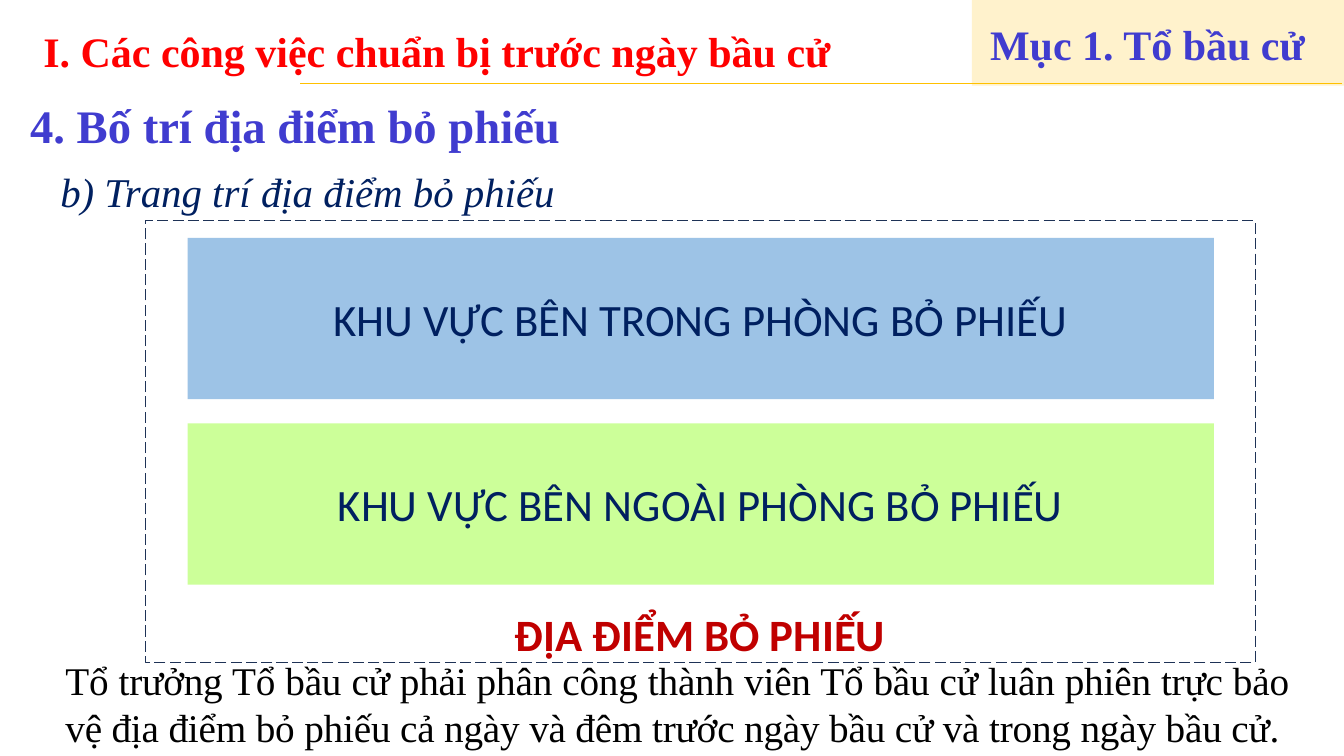
"""Build the slide on arranging and decorating the polling place."""
import pptx
import pptx.dml.color
import pptx.enum.dml
import pptx.enum.shapes
import pptx.enum.text
import pptx.util

PX = 9144
COLORS = {
    "red": "FF0000", "violet": "403CCF", "navy": "002060", "crimson": "C00000",
    "black": "000000", "cream": "FFF2CC", "gold": "FFC000", "frame": "1E3256",
    "blue": "9DC3E6", "green": "CCFF99",
}
SERIF, SANS = "Times New Roman", "Calibri"
ALIGN = pptx.enum.text.PP_ALIGN
ANCHOR = pptx.enum.text.MSO_ANCHOR
RECTANGLE = pptx.enum.shapes.MSO_SHAPE.RECTANGLE


def color(name):
    return pptx.dml.color.RGBColor.from_string(COLORS[name])


def write(box, text, size, font, ink, align=ALIGN.LEFT, anchor=ANCHOR.TOP,
          bold=False, italic=False):
    frame = box.text_frame
    frame.text = text
    frame.word_wrap = True
    frame.vertical_anchor = anchor
    para = frame.paragraphs[0]
    para.alignment = align
    span = para.runs[0]
    span.font.size = pptx.util.Pt(size)
    span.font.name = font
    span.font.bold = bold
    span.font.italic = italic
    span.font.color.rgb = color(ink)
    return para


deck = pptx.Presentation()
deck.slide_width = 1333 * PX
deck.slide_height = 750 * PX
page = deck.slides.add_slide(deck.slide_layouts[5])

title = page.shapes.title
title.left, title.top, title.width, title.height = [n * PX for n in (33, 0, 1280, 100)]
write(title, "I. Các công việc chuẩn bị trước ngày bầu cử", 30, SERIF, "red",
      anchor=ANCHOR.MIDDLE, bold=True)
title.text_frame.auto_size = pptx.enum.text.MSO_AUTO_SIZE.NONE

section_band = page.shapes.add_shape(RECTANGLE, *[n * PX for n in (964, 0, 369, 85)])
section_band.shadow.inherit = False
section_band.fill.solid()
section_band.fill.fore_color.rgb = color("cream")
section_band.line.fill.background()

header_rule = page.shapes.add_connector(
    pptx.enum.shapes.MSO_CONNECTOR.STRAIGHT, *[n * PX for n in (1331, 83, 298, 83)])
header_rule.line.color.rgb = color("gold")
header_rule.line.width = pptx.util.Pt(0.5)
header_rule._element.spPr.append(pptx.oxml.parse_xml(
    '<a:effectLst xmlns:a="http://schemas.openxmlformats.org/drawingml/2006/main"/>'))

section_label = page.shapes.add_textbox(*[n * PX for n in (982, 24, 351, 41)])
para = write(section_label, "Mục 1. Tổ bầu cử", 30, SERIF, "violet", bold=True)
para.line_spacing = pptx.util.Pt(32.1)
label_frame = section_label.text_frame
label_frame.word_wrap = False
label_frame.margin_left = label_frame.margin_right = 0
label_frame.margin_top = label_frame.margin_bottom = 0

heading = page.shapes.add_textbox(*[n * PX for n in (20, 89, 1303, 65)])
para = write(heading, "4. Bố trí địa điểm bỏ phiếu", 33.3, SERIF, "violet", bold=True)
para.line_spacing = pptx.util.Pt(41.7)

subheading = page.shapes.add_textbox(*[n * PX for n in (50, 160, 1234, 59)])
write(subheading, "b) Trang trí địa điểm bỏ phiếu", 29.2, SERIF, "navy",
      align=ALIGN.JUSTIFY, italic=True)

areas = [
    ("KHU VỰC BÊN TRONG PHÒNG BỎ PHIẾU", "blue"),
    ("KHU VỰC BÊN NGOÀI PHÒNG BỎ PHIẾU", "green"),
]
for row, (name, fill) in enumerate(areas):
    area = page.shapes.add_shape(
        RECTANGLE, *[n * PX for n in (186, 236 + 184 * row, 1018, 160)])
    area.shadow.inherit = False
    area.fill.solid()
    area.fill.fore_color.rgb = color(fill)
    area.line.fill.background()
    write(area, name, 32, SANS, "navy", align=ALIGN.CENTER, anchor=ANCHOR.MIDDLE)

polling_place = page.shapes.add_shape(RECTANGLE, *[n * PX for n in (144, 219, 1101, 438)])
polling_place.shadow.inherit = False
polling_place.fill.background()
polling_place.line.color.rgb = color("frame")
polling_place.line.width = pptx.util.Pt(1)
polling_place.line.dash_style = pptx.enum.dml.MSO_LINE.LONG_DASH
write(polling_place, "ĐỊA ĐIỂM BỎ PHIẾU", 32, SANS, "crimson",
      align=ALIGN.CENTER, anchor=ANCHOR.BOTTOM, bold=True)
polling_place.text_frame.margin_bottom = 2 * PX

duty_note = page.shapes.add_textbox(*[n * PX for n in (55, 646, 1234, 104)])
para = write(
    duty_note,
    "Tổ trưởng Tổ bầu cử phải phân công thành viên Tổ bầu cử luân phiên trực bảo vệ "
    "địa điểm bỏ phiếu cả ngày và đêm trước ngày bầu cử và trong ngày bầu cử.",
    28, SERIF, "black", align=ALIGN.JUSTIFY)
para.runs[0].font._element.set("spc", "-10")

deck.save("out.pptx")
